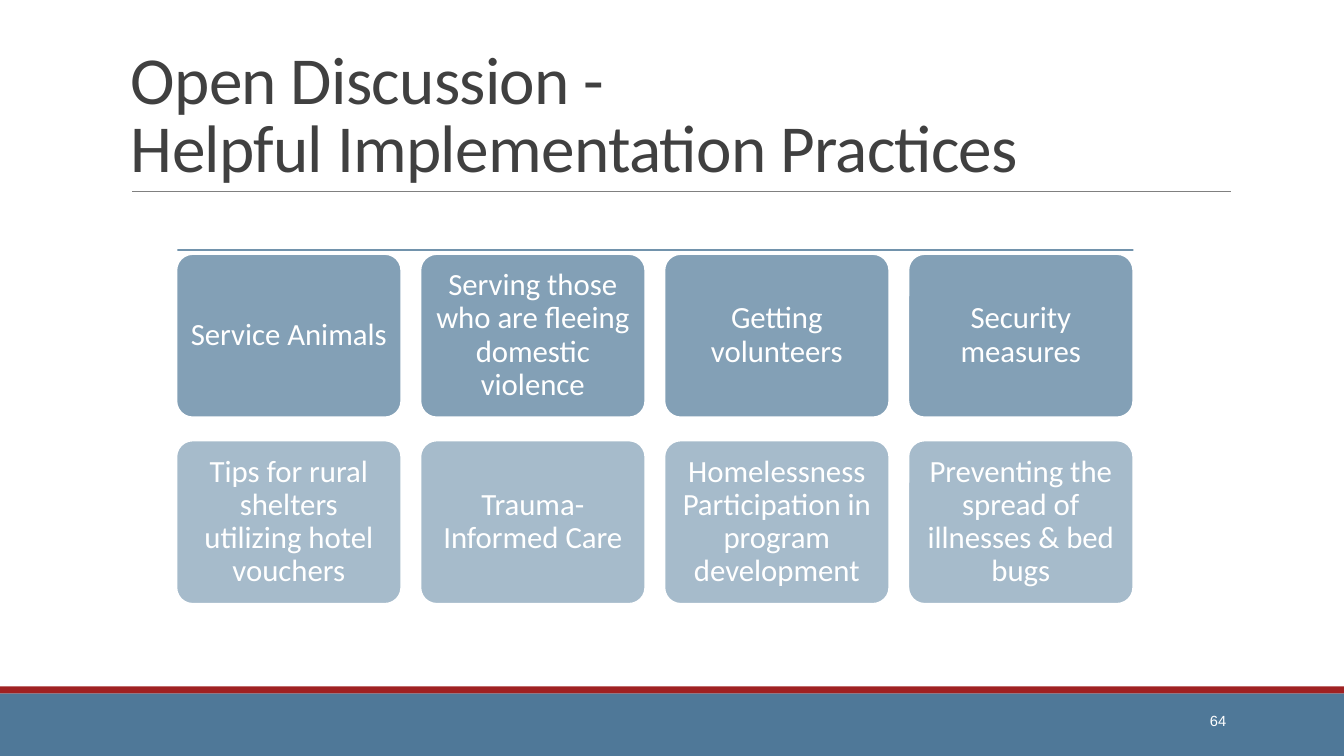
from lxml.etree import SubElement
from pptx import Presentation
from pptx.dml.color import RGBColor
from pptx.enum.shapes import MSO_CONNECTOR, MSO_SHAPE
from pptx.enum.text import MSO_ANCHOR, PP_ALIGN
from pptx.oxml.ns import qn
from pptx.util import Inches, Pt


def add_block(kind, left, top, width, height, color, opacity=100):
    block = slide.shapes.add_shape(
        kind, Inches(left), Inches(top), Inches(width), Inches(height))
    block.shadow.inherit = False
    block.fill.solid()
    block.fill.fore_color.rgb = RGBColor.from_string(color)
    if opacity < 100:
        srgb = block.fill._xPr.find(qn("a:solidFill")).find(qn("a:srgbClr"))
        SubElement(srgb, qn("a:alpha")).set("val", str(opacity * 1000))
    if kind == MSO_SHAPE.ROUNDED_RECTANGLE:
        block.adjustments[0] = 0.1
        block.line.color.rgb = RGBColor.from_string("FFFFFF")
        block.line.width = Pt(1.25)
    else:
        block.line.fill.background()
    return block


def write(box, text, font, size, color, align, anchor, spacing=1.0):
    frame = box.text_frame
    frame.text = text
    frame.word_wrap = True
    frame.vertical_anchor = anchor
    paragraph = frame.paragraphs[0]
    paragraph.alignment = align
    paragraph.line_spacing = spacing
    for run in paragraph.runs:
        run.font.name = font
        run.font.size = Pt(size)
        run.font.color.rgb = RGBColor.from_string(color)


prs = Presentation()
prs.slide_width = Inches(13.33)
prs.slide_height = Inches(7.5)
slide = prs.slides.add_slide(prs.slide_layouts[6])

title_rule = slide.shapes.add_connector(
    MSO_CONNECTOR.STRAIGHT, Inches(1.31), Inches(1.9), Inches(12.21), Inches(1.9))
title_rule.line.color.rgb = RGBColor.from_string("808080")
title_rule.line.width = Pt(0.5)
SubElement(title_rule._element.spPr, qn("a:effectLst"))

add_block(MSO_SHAPE.RECTANGLE, 0, 6.88, 13.33, 0.62, "4F7898")
add_block(MSO_SHAPE.RECTANGLE, 0, 6.81, 13.33, 0.07, "9F2122")

page_number = slide.shapes.add_textbox(
    Inches(10.83), Inches(6.95), Inches(1.43), Inches(0.4))
write(page_number, "64", "Arial", 10.5, "FFFFFF", PP_ALIGN.RIGHT, MSO_ANCHOR.MIDDLE)

title = slide.shapes.add_textbox(Inches(1.2), Inches(0.31), Inches(11), Inches(1.59))
write(title, "Open Discussion -\vHelpful Implementation Practices", "Calibri", 48,
      "404040", PP_ALIGN.LEFT, MSO_ANCHOR.BOTTOM, 0.85)
for run in title.text_frame.paragraphs[0].runs:
    run.font._element.set("spc", "-50")

add_block(MSO_SHAPE.ROUNDED_RECTANGLE, 1.75, 2.46, 9.5, 0.04, "4F7898", 80)

practice_rows = [
    (2.52, 70, ["Service Animals",
                "Serving those who are fleeing domestic violence",
                "Getting volunteers",
                "Security measures"]),
    (4.37, 50, ["Tips for rural shelters utilizing hotel vouchers",
                "Trauma-Informed Care",
                "Homelessness Participation in program development",
                "Preventing the spread of illnesses & bed bugs"]),
]
for top, opacity, practices in practice_rows:
    for column, practice in enumerate(practices):
        card = add_block(MSO_SHAPE.ROUNDED_RECTANGLE, 1.75 + column * 2.42, top,
                         2.23, 1.62, "4F7898", opacity)
        write(card, practice, "Calibri", 22, "FFFFFF",
              PP_ALIGN.CENTER, MSO_ANCHOR.MIDDLE, 0.9)
        frame = card.text_frame
        frame.margin_left = frame.margin_right = Inches(0.09)
        frame.margin_top = frame.margin_bottom = Inches(0.09)

prs.save("out.pptx")
